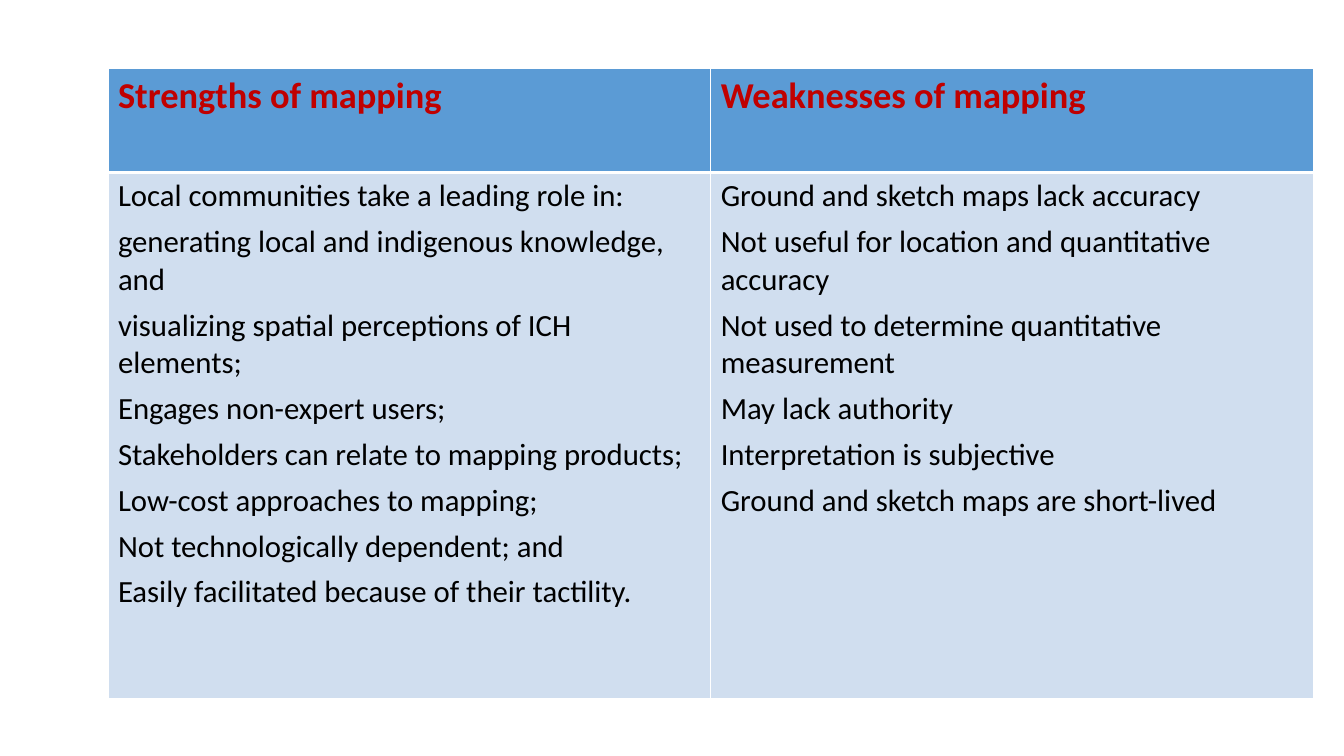
from lxml import etree
from pptx import Presentation
from pptx.dml.color import RGBColor
from pptx.oxml import ns
from pptx.util import Cm, Pt

HEADER_BLUE = RGBColor(0x5B, 0x9B, 0xD5)
BODY_BLUE = RGBColor(0xD0, 0xDE, 0xEF)
HEADING_RED = RGBColor(0xC0, 0x00, 0x00)
BLACK = RGBColor(0x00, 0x00, 0x00)
WHITE = RGBColor(0xFF, 0xFF, 0xFF)
FONT = "Calibri"

COLUMNS = {
    "Strengths of mapping": [
        "Local communities take a leading role in:",
        "generating local and indigenous knowledge, and",
        "visualizing spatial perceptions of ICH elements;",
        "Engages non-expert users;",
        "Stakeholders can relate to mapping products;",
        "Low-cost approaches to mapping;",
        "Not technologically dependent; and",
        "Easily facilitated because of their tactility.",
    ],
    "Weaknesses of mapping": [
        "Ground and sketch maps lack accuracy",
        "Not useful for location and quantitative accuracy",
        "Not used to determine quantitative measurement",
        "May lack authority",
        "Interpretation is subjective",
        "Ground and sketch maps are short-lived",
    ],
}


def set_borders(cell, top, bottom):
    """Draw white cell borders; top and bottom are widths in points."""
    properties = cell._tc.get_or_add_tcPr()
    widths = {"lnL": 1, "lnR": 1, "lnT": top, "lnB": bottom}
    # Border elements come before the fill
    for index, (side, width) in enumerate(widths.items()):
        line = etree.Element(ns.qn(f"a:{side}"), w=str(Pt(width)))
        fill = etree.SubElement(line, ns.qn("a:solidFill"))
        etree.SubElement(fill, ns.qn("a:srgbClr"), val=str(WHITE))
        properties.insert(index, line)


def fill_cell(cell, lines, fill, size, color, bold):
    cell.fill.solid()
    cell.fill.fore_color.rgb = fill
    cell.text_frame.text = "\n".join(lines)
    for number, para in enumerate(cell.text_frame.paragraphs):
        if number:
            para.space_before = Pt(6)
        for span in para.runs:
            span.font.name = FONT
            span.font.size = Pt(size)
            span.font.bold = bold
            span.font.color.rgb = color


def add_comparison(page):
    frame = page.shapes.add_table(2, len(COLUMNS), Cm(2.72), Cm(1.73),
                                  Cm(30.38), Cm(15.88))
    table = frame.table
    table.rows[0].height = Cm(2.62)
    table.rows[1].height = Cm(13.26)
    for index, (heading, points) in enumerate(COLUMNS.items()):
        table.columns[index].width = Cm(15.19)
        header, body = table.cell(0, index), table.cell(1, index)
        fill_cell(header, [heading], HEADER_BLUE, 26, HEADING_RED, True)
        set_borders(header, 1, 3)
        fill_cell(body, points, BODY_BLUE, 22, BLACK, False)
        set_borders(body, 3, 1)


def main():
    deck = Presentation()
    deck.slide_width, deck.slide_height = Cm(33.87), Cm(19.05)
    page = deck.slides.add_slide(deck.slide_layouts[6])

    # Strengths and weaknesses side by side
    add_comparison(page)
    deck.save("out.pptx")


if __name__ == "__main__":
    main()
